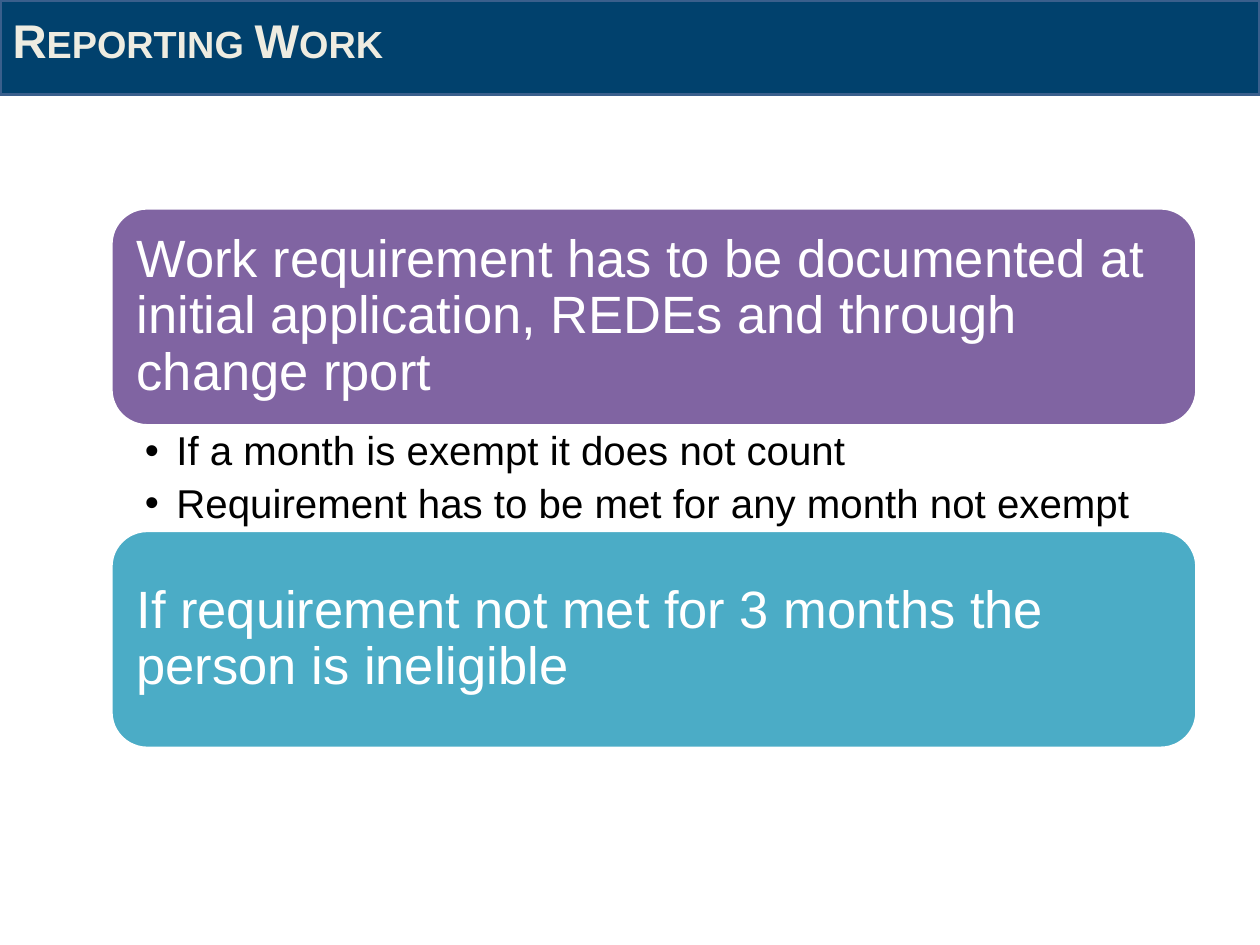
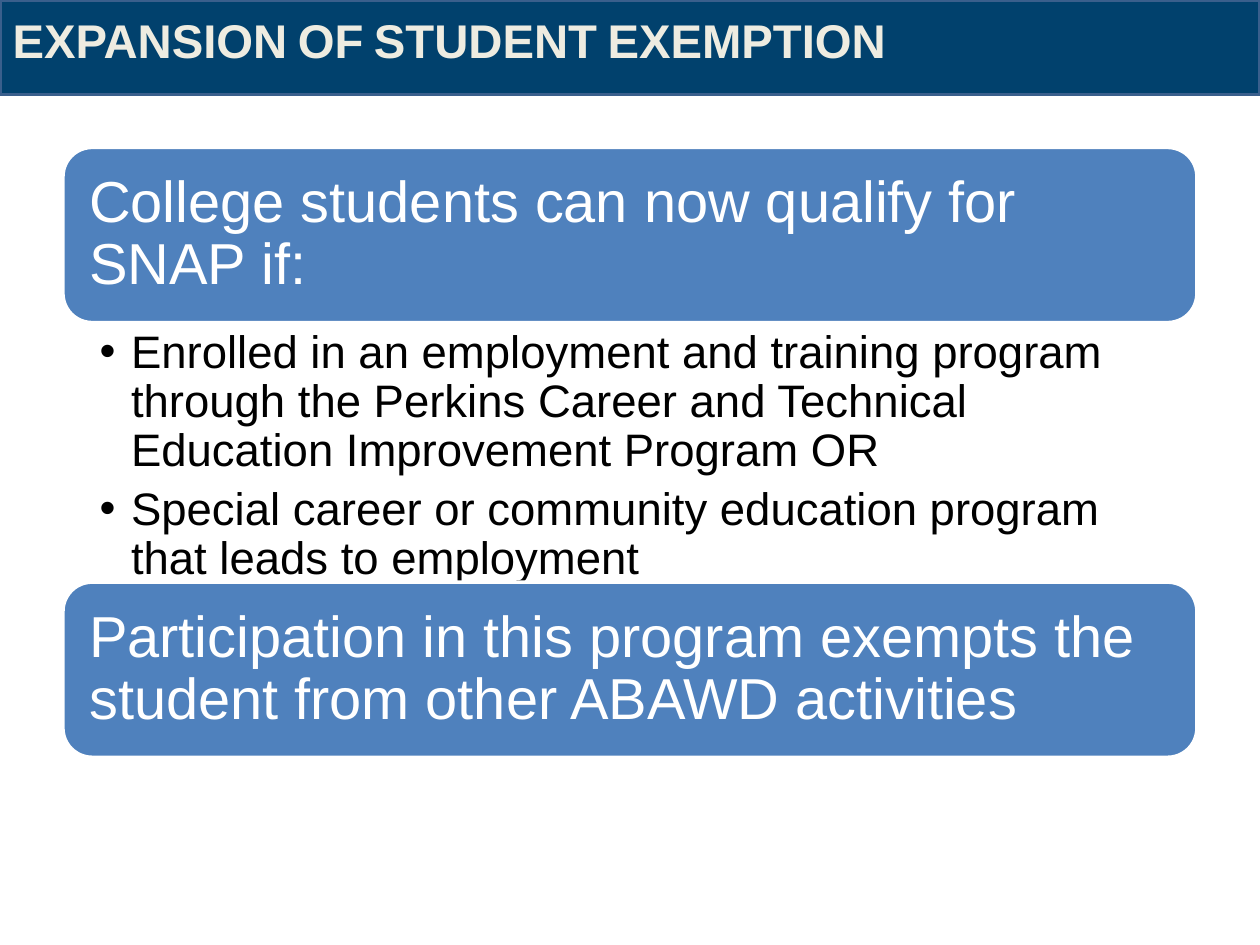
import pptx
import pptx.util
import pptx.dml.color
import pptx.enum.shapes
import pptx.enum.text

Pt = pptx.util.Pt
Inches = pptx.util.Inches
ANCHOR = pptx.enum.text.MSO_ANCHOR
SLIDE_W, SLIDE_H = 10, 7.5
BAND_H = SLIDE_H / 10
RIGHT = 0.95 * SLIDE_W
FONT = "Arial"
COLORS = {
    "band": "01416D",
    "band_line": "3A5F8C",
    "title": "EEECE1",
    "white": "FFFFFF",
    "black": "000000",
    "purple": "8064A2",
    "aqua": "4BACC6",
    "blue": "4F81BD",
}


def rgb(name):
    return pptx.dml.color.RGBColor.from_string(COLORS[name])


def place(sp, left, top, width, height):
    sp.left, sp.top = Inches(left), Inches(top)
    sp.width, sp.height = Inches(width), Inches(height)


def set_frame(tf, anchor, left, top, right, bottom):
    tf.word_wrap = True
    tf.auto_size = pptx.enum.text.MSO_AUTO_SIZE.NONE
    tf.vertical_anchor = anchor
    tf.margin_left, tf.margin_top = Inches(left), Inches(top)
    tf.margin_right, tf.margin_bottom = Inches(right), Inches(bottom)


def format_paragraph(p, size, color, line_spacing=0.9, bold=False):
    p.alignment = pptx.enum.text.PP_ALIGN.LEFT
    p.line_spacing = line_spacing
    p.space_before = Pt(0)
    for r in p.runs:
        r.font.name = FONT
        r.font.size = Pt(size)
        r.font.bold = bold
        r.font.color.rgb = rgb(color)


def add_box(slide, kind, box, fill, line):
    sp = slide.shapes.add_shape(kind, *map(Inches, box))
    sp.shadow.inherit = False
    sp.fill.solid()
    sp.fill.fore_color.rgb = rgb(fill)
    sp.line.color.rgb = rgb(line)
    sp.line.width = Pt(2)
    return sp


def add_layout_band(slide):
    band = add_box(slide, pptx.enum.shapes.MSO_SHAPE.RECTANGLE,
                   (0, 0, SLIDE_W, BAND_H), "band", "band_line")
    slide.slide_layout.shapes.element.insert(2, band.element)


def set_title(slide, text):
    title = slide.shapes.title
    place(title, 0, 0, RIGHT, 0.58)
    tf = title.text_frame
    tf.text = text
    set_frame(tf, ANCHOR.TOP, 0.1, 0.09, 0.1, 0.05)
    p = tf.paragraphs[0]
    format_paragraph(p, 27, "title", line_spacing=1.0, bold=True)
    p.runs[0]._r.get_or_add_rPr().set("cap", "small")


def add_card(slide, box, text, fill, size, inset):
    card = add_box(slide, pptx.enum.shapes.MSO_SHAPE.ROUNDED_RECTANGLE,
                   box, fill, "white")
    card.text_frame.text = text
    set_frame(card.text_frame, ANCHOR.MIDDLE, inset, inset, inset, inset)
    format_paragraph(card.text_frame.paragraphs[0], size, "white")


def set_list(slide, box, items, size, margins):
    body = slide.placeholders[1]
    place(body, *box)
    tf = body.text_frame
    tf.text = "\n".join(items)
    set_frame(tf, ANCHOR.TOP, *margins)
    for p in tf.paragraphs:
        pPr = p._p.get_or_add_pPr()
        pPr.set("marL", str(Inches(0.25)))
        pPr.set("indent", str(-Inches(0.25)))
        format_paragraph(p, size, "black")
        p.space_after = Pt(round(0.22 * size, 1))


def add_card_stack(slide, left, top, card_h, list_h, cards, items,
                   card_size, inset, list_size, list_margins):
    width = RIGHT - left
    set_list(slide, (left, top + card_h, width, list_h),
             items, list_size, list_margins)
    for i, (text, fill) in enumerate(cards):
        y = top + i * (card_h + list_h)
        add_card(slide, (left, y, width, card_h), text, fill, card_size, inset)


def main():
    prs = pptx.Presentation()
    prs.slide_width, prs.slide_height = Inches(SLIDE_W), Inches(SLIDE_H)
    layout = prs.slide_layouts[1]

    reporting = prs.slides.add_slide(layout)
    add_layout_band(reporting)
    set_title(reporting, "Reporting Work")
    add_card_stack(
        reporting, left=0.88, top=1.65, card_h=1.73, list_h=0.83,
        cards=[
            ("Work requirement has to be documented at initial application, "
             "REDEs and through change rport", "purple"),
            ("If requirement not met for 3 months the person is ineligible",
             "aqua"),
        ],
        items=["If a month is exempt it does not count",
               "Requirement has to be met for any month not exempt"],
        card_size=30, inset=0.12,
        list_size=23, list_margins=(0.27, 0.04, 0.23, 0.04))

    students = prs.slides.add_slide(layout)
    set_title(students, "EXPANSION OF STUDENT EXEMPTION")
    add_card_stack(
        students, left=0.5, top=1.17, card_h=1.39, list_h=2.06,
        cards=[
            ("College students can now qualify for SNAP if:", "blue"),
            ("Participation in this program exempts the student from other "
             "ABAWD activities", "blue"),
        ],
        items=["Enrolled in an employment and training program through the "
               "Perkins Career and Technical Education Improvement Program OR",
               "Special career or community education program that leads to "
               "employment"],
        card_size=33, inset=0.14,
        list_size=26, list_margins=(0.29, 0.05, 0.26, 0.05))

    prs.save("out.pptx")


if __name__ == "__main__":
    main()
